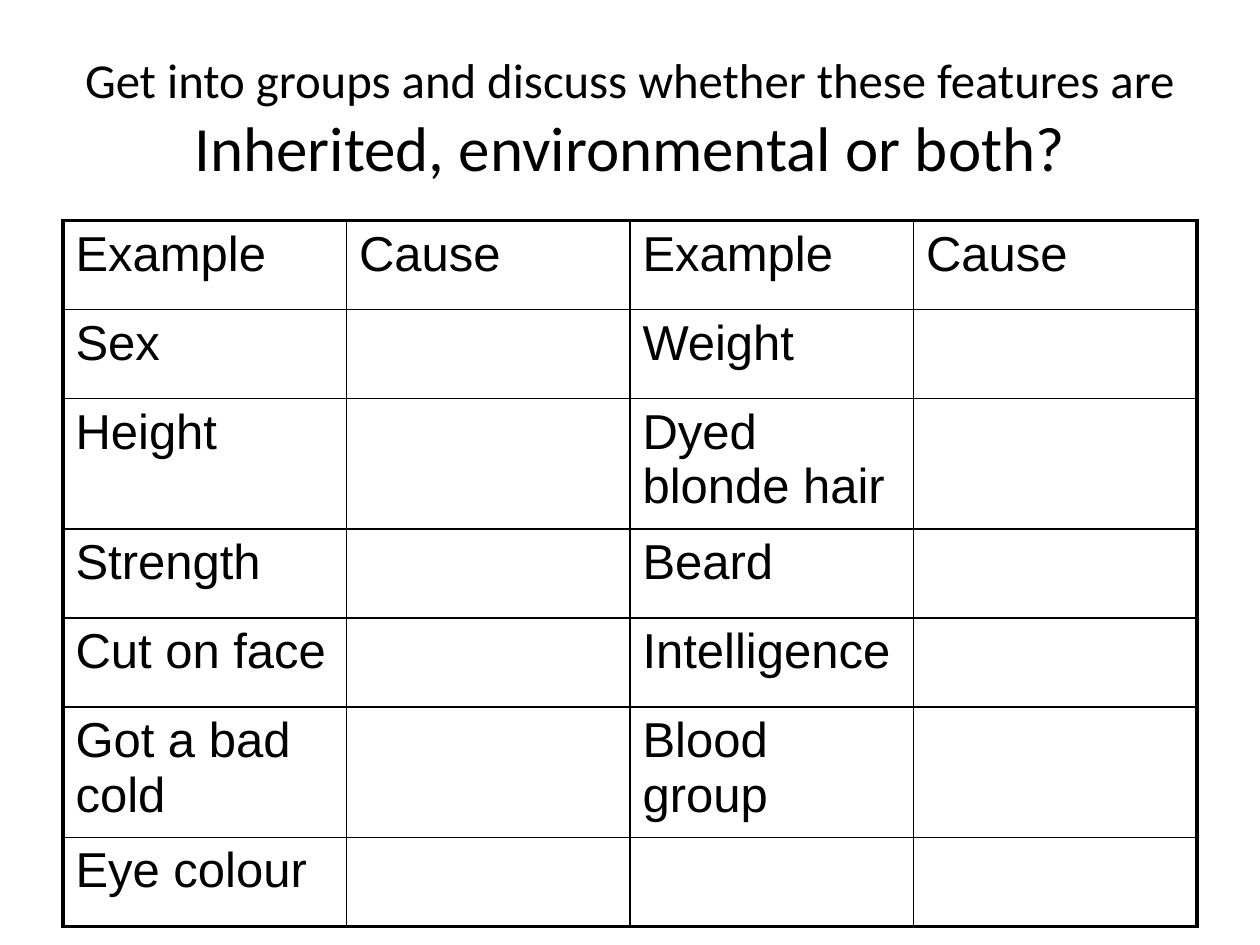
from lxml import etree
from pptx import Presentation
from pptx.dml.color import RGBColor
from pptx.enum import text
from pptx.oxml.ns import qn
from pptx.util import Pt

# Content
TITLE = [
    ("Get into groups and discuss whether these features are ", 27.9),
    ("Inherited, environmental or both?", 36),
]
HEADER = ("Example", "Cause") * 2
EXAMPLES = [
    ("Sex", "Weight"),
    ("Height", "Dyed blonde hair"),
    ("Strength", "Beard"),
    ("Cut on face", "Intelligence"),
    ("Got a bad cold", "Blood group"),
    ("Eye colour", ""),
]
ROWS = [HEADER] + [(left, "", right, "") for left, right in EXAMPLES]

THEME = {
    "ink": "000000",
    "title_font": "Calibri",
    "table_font": "Arial",
    "table_size": 28,
    "outer": 2.25,
    "inner": 1,
}
INK = RGBColor.from_string(THEME["ink"])
LEFT, WIDTH = 36, 648
TITLE_TOP, TITLE_HEIGHT = 21.6, 90
TABLE_TOP, ROW_HEIGHT = 126, 50.9


def set_border(cell, side, width):
    """Add one solid border; call in the order L, R, T, B."""
    ln = etree.SubElement(cell._tc.get_or_add_tcPr(), qn("a:ln" + side), w=str(Pt(width)))
    fill = etree.SubElement(ln, qn("a:solidFill"))
    etree.SubElement(fill, qn("a:srgbClr"), val=THEME["ink"])


def add_title(s):
    sp = s.shapes.add_textbox(Pt(LEFT), Pt(TITLE_TOP), Pt(WIDTH), Pt(TITLE_HEIGHT))
    tf = sp.text_frame
    tf.word_wrap = True
    tf.vertical_anchor = text.MSO_ANCHOR.MIDDLE
    p = tf.paragraphs[0]
    p.alignment = text.PP_ALIGN.CENTER
    p.font.name = THEME["title_font"]
    p.font.color.rgb = INK
    for words, size in TITLE:
        r = p.add_run()
        r.text = words
        r.font.size = Pt(size)


def add_table(s):
    n_rows, n_cols = len(ROWS), len(HEADER)
    table = s.shapes.add_table(n_rows, n_cols, Pt(LEFT), Pt(TABLE_TOP),
                               Pt(WIDTH), Pt(ROW_HEIGHT * n_rows)).table
    table.first_row = table.horz_banding = False
    for i, row in enumerate(ROWS):
        for j, words in enumerate(row):
            cell = table.cell(i, j)
            cell.text = words
            font = cell.text_frame.paragraphs[0].font
            font.name = THEME["table_font"]
            font.size = Pt(THEME["table_size"])
            font.color.rgb = INK
            # Heavy frame around the table, thin lines inside
            on_edge = {"L": j == 0, "R": j == n_cols - 1,
                       "T": i == 0, "B": i == n_rows - 1}
            for side, edge in on_edge.items():
                set_border(cell, side, THEME["outer" if edge else "inner"])
            cell.fill.background()


prs = Presentation()
prs.slide_width, prs.slide_height = Pt(720), Pt(540)
s = prs.slides.add_slide(prs.slide_layouts[6])
add_title(s)
add_table(s)
prs.save("out.pptx")
